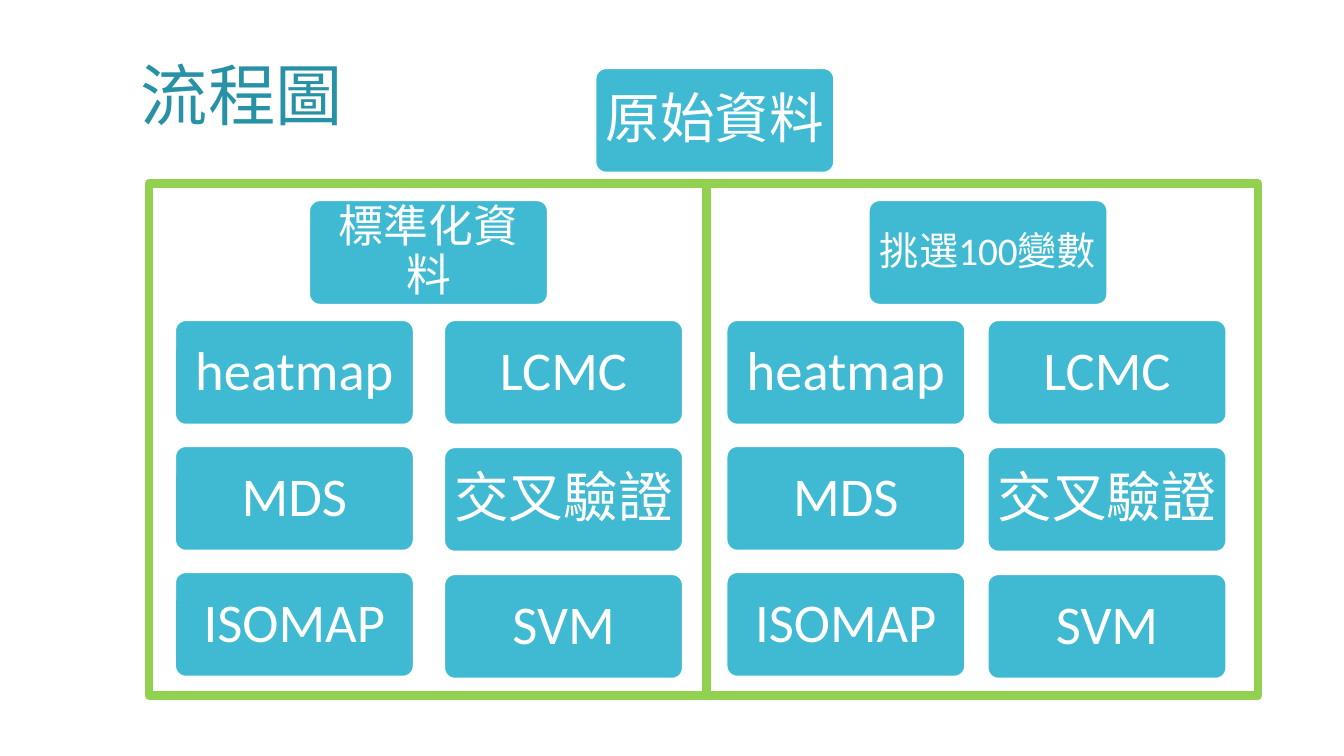
from lxml.etree import SubElement
from pptx import Presentation
from pptx.dml.color import RGBColor
from pptx.enum.shapes import MSO_SHAPE
from pptx.enum.text import MSO_ANCHOR, MSO_AUTO_SIZE, PP_ALIGN
from pptx.oxml.ns import qn
from pptx.util import Inches, Pt

TEAL, DARK, GREEN, WHITE = "40BAD2", "2791A6", "92D050", "FFFFFF"
CARD_W, CARD_H = 2.36, 1.03
GRID_TOP = 3.18
HEAD_TOP = 1.99
PANEL_TOP, PANEL_H = 1.82, 5.08

# Each column: its steps from top to bottom, and the distance between rows.
COLUMNS = [
    (["heatmap", "MDS", "ISOMAP"], 1.25),
    (["LCMC", "交叉驗證", "SVM"], 1.26),
]
# Each panel: left, width, column lefts, heading, heading left, heading size.
PANELS = [
    (1.48, 5.53, (1.74, 4.41), "標準化資料", 3.07, 32),
    (7.01, 5.47, (7.21, 9.8), "挑選100變數", 8.62, 28),
]


def color(code):
    return RGBColor.from_string(code)


def style(para, size, code):
    for run in para.runs:
        run.font.size = Pt(size)
        run.font.name = "Calibri"
        run.font.color.rgb = color(code)


def add_box(slide, kind, left, top, width, height):
    box = slide.shapes.add_shape(
        kind, Inches(left), Inches(top), Inches(width), Inches(height))
    box.shadow.inherit = False
    return box


def add_card(slide, text, left, top, size=39):
    card = add_box(slide, MSO_SHAPE.ROUNDED_RECTANGLE, left, top, CARD_W, CARD_H)
    card.adjustments[0] = 0.1
    card.fill.solid()
    card.fill.fore_color.rgb = color(TEAL)
    card.line.color.rgb = color(WHITE)
    card.line.width = Pt(0.85)
    frame = card.text_frame
    frame.text = text
    frame.word_wrap = True
    frame.vertical_anchor = MSO_ANCHOR.MIDDLE
    frame.margin_left = frame.margin_right = Inches(0.06)
    frame.margin_top = frame.margin_bottom = Inches(0.06)
    para = frame.paragraphs[0]
    para.alignment = PP_ALIGN.CENTER
    para.line_spacing = 0.9
    after = SubElement(para._p.get_or_add_pPr(), qn("a:spcAft"))
    SubElement(after, qn("a:spcPct")).set("val", "35000")
    style(para, size, WHITE)


def add_panel(slide, left, width):
    panel = add_box(slide, MSO_SHAPE.RECTANGLE, left, PANEL_TOP, width, PANEL_H)
    panel.fill.background()
    panel.line.color.rgb = color(GREEN)
    panel.line.width = Pt(6)


def add_title(slide, text):
    title = slide.shapes.add_textbox(
        Inches(1.3), Inches(0.48), Inches(2.38), Inches(0.91))
    frame = title.text_frame
    frame.text = text
    frame.word_wrap = True
    frame.auto_size = MSO_AUTO_SIZE.SHAPE_TO_FIT_TEXT
    style(frame.paragraphs[0], 48, DARK)


def main():
    deck = Presentation()
    deck.slide_width, deck.slide_height = Inches(13.33), Inches(7.5)
    slide = deck.slides.add_slide(deck.slide_layouts[6])
    add_title(slide, "流程圖")
    add_card(slide, "原始資料", 5.91, 0.68)
    for left, width, lefts, head, head_left, size in PANELS:
        add_panel(slide, left, width)
        add_card(slide, head, head_left, HEAD_TOP, size)
        for x, (steps, pitch) in zip(lefts, COLUMNS):
            for row, step in enumerate(steps):
                add_card(slide, step, x, GRID_TOP + row * pitch)
    deck.save("out.pptx")


if __name__ == "__main__":
    main()
